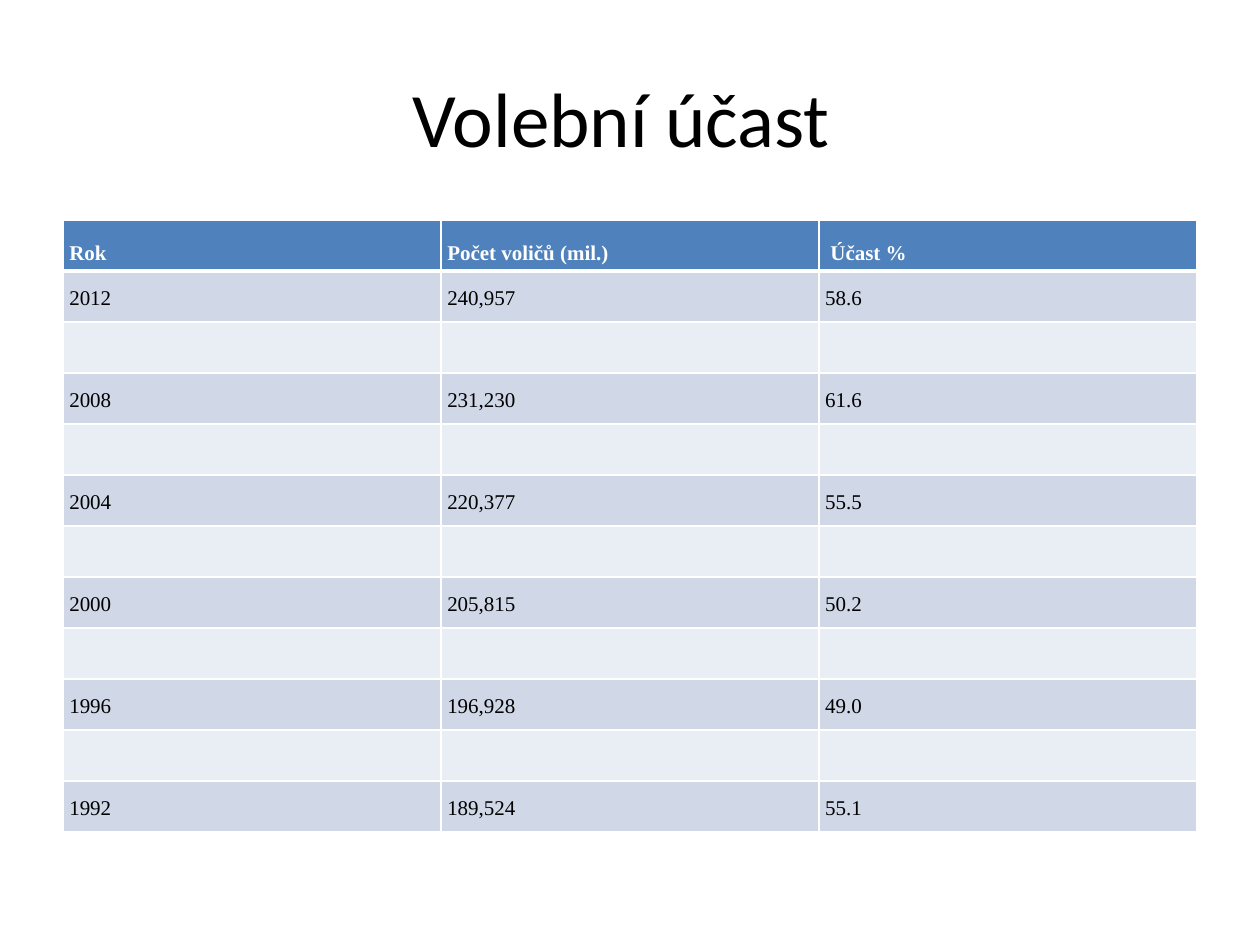
from lxml import etree
from pptx import Presentation
from pptx import util as u
from pptx.dml.color import RGBColor
from pptx.enum import text
from pptx.oxml.ns import qn

SCALE = 914400 // 126
BLACK = RGBColor(0x00, 0x00, 0x00)
WHITE = RGBColor(0xFF, 0xFF, 0xFF)
BLUE = RGBColor(0x4F, 0x81, 0xBD)
BANDS = [RGBColor(0xD0, 0xD8, 0xE8), RGBColor(0xE9, 0xED, 0xF4)]

HEAD = ("Rok", "Počet voličů (mil.)", " Účast %")
TURNOUT = [
    ("2012", "240,957", "58.6"),
    ("2008", "231,230", "61.6"),
    ("2004", "220,377", "55.5"),
    ("2000", "205,815", "50.2"),
    ("1996", "196,928", "49.0"),
    ("1992", "189,524", "55.1"),
]


def px(n):
    return u.Emu(n * SCALE)


def add_run(para, words, font, size, color, bold=False):
    run = para.add_run()
    run.text = words
    run.font.name = font
    run.font.size = u.Pt(size)
    run.font.bold = bold
    run.font.color.rgb = color


def add_title(slide, words):
    frame = slide.shapes.add_textbox(px(63), px(38), px(1134), px(157)).text_frame
    frame.word_wrap = True
    frame.vertical_anchor = text.MSO_ANCHOR.MIDDLE
    para = frame.paragraphs[0]
    para.alignment = text.PP_ALIGN.CENTER
    add_run(para, words, "Calibri", 44, BLACK)


def set_edges(cell, top, bottom):
    """Draw white cell borders; top and bottom are widths in points."""
    props = cell._tc.get_or_add_tcPr()
    for side, width in (("L", 1), ("R", 1), ("T", top), ("B", bottom)):
        line = etree.SubElement(props, qn(f"a:ln{side}"), w=str(u.Pt(width)))
        fill = etree.SubElement(line, qn("a:solidFill"))
        etree.SubElement(fill, qn("a:srgbClr"), val=str(WHITE))


def fill_cell(cell, words, row):
    head = row == 0
    set_edges(cell, 3 if row == 1 else 1, 3 if head else 1)
    cell.fill.solid()
    cell.fill.fore_color.rgb = BLUE if head else BANDS[(row - 1) % 2]
    cell.margin_left = cell.margin_right = u.Inches(0.05)
    cell.margin_top = cell.margin_bottom = u.Inches(0.05)
    cell.vertical_anchor = text.MSO_ANCHOR.BOTTOM if head else text.MSO_ANCHOR.MIDDLE
    para = cell.text_frame.paragraphs[0]
    para.line_spacing = u.Pt(15.6)
    if words:
        color = WHITE if head else BLACK
        add_run(para, words, "Times New Roman", 12, color, head)


def add_grid(slide, rows):
    frame = slide.shapes.add_table(
        len(rows), len(HEAD), px(63), px(220), px(1134), px(51 * len(rows)))
    for r, row in enumerate(rows):
        for c, words in enumerate(row):
            fill_cell(frame.table.cell(r, c), words, r)


def main():
    deck = Presentation()
    deck.slide_width, deck.slide_height = px(1260), px(945)
    slide = deck.slides.add_slide(deck.slide_layouts[6])
    add_title(slide, "Volební účast ")
    rows = [HEAD]
    for entry in TURNOUT:
        rows += [entry, ("",) * len(HEAD)]
    add_grid(slide, rows[:-1])
    deck.save("out.pptx")


if __name__ == "__main__":
    main()
